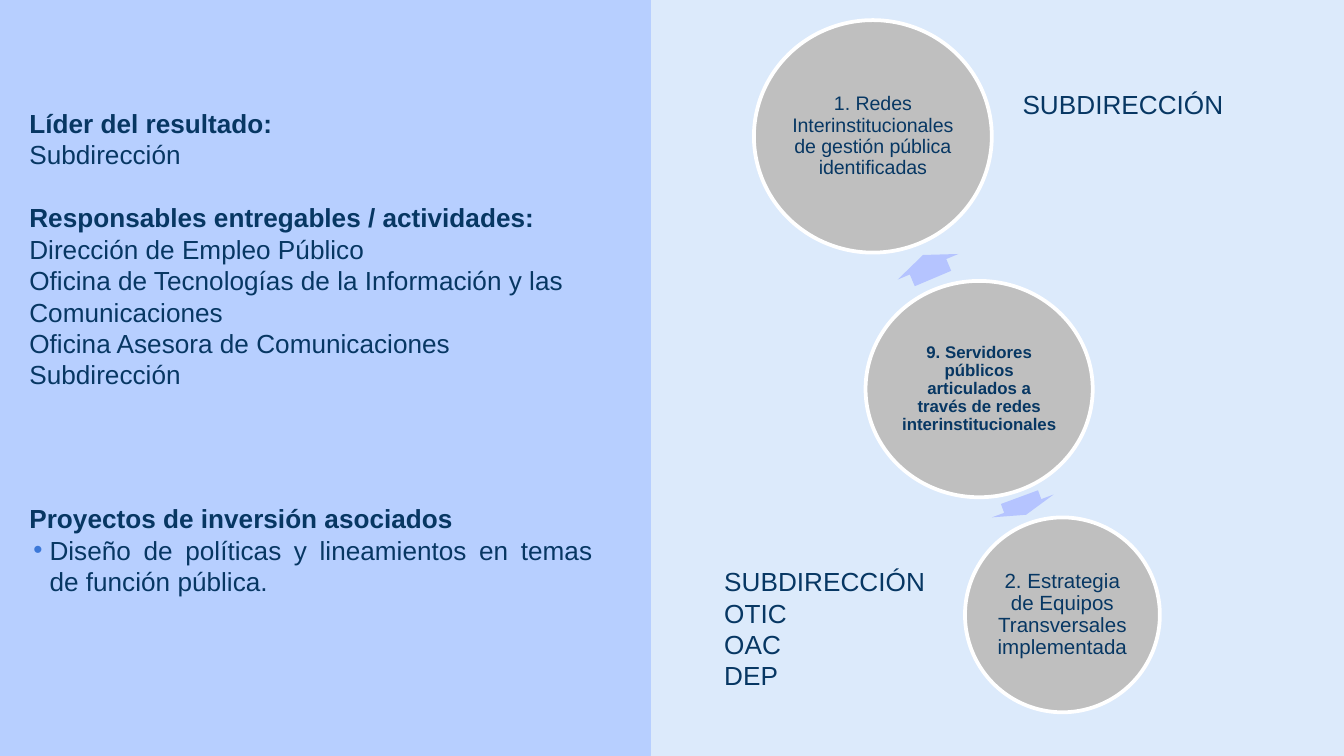
from lxml import etree
from pptx import Presentation, util as u
from pptx.dml.color import RGBColor
from pptx.enum import shapes, text
from pptx.oxml import ns

PX = 9144  # 100 px to the inch
FONT = "Arial"
INK, WHITE, GREY = "073763", "FFFFFF", "BFBFBF"
PALE, BLUE, LILAC, DOT = "DCEAFB", "B7CFFF", "B5C4FF", "3C78D8"
KIND = shapes.MSO_SHAPE
ALIGN = text.PP_ALIGN


def emu(*sizes):
    return [u.Emu(size * PX) for size in sizes]


def paint(part, color):
    """Give a fill or a font a solid colour."""
    if hasattr(part, "solid"):
        part.solid()
        part.fore_color.rgb = RGBColor.from_string(color)
    else:
        part.color.rgb = RGBColor.from_string(color)


def add_form(host, kind, box, fill, edge=None):
    form = host.add_shape(kind, *emu(*box))
    form.shadow.inherit = False
    paint(form.fill, fill)
    if edge:
        paint(form.line.fill, edge)
        form.line.width = u.Pt(2)
    else:
        form.line.fill.background()
    return form


def add_box(host, box, inset=None):
    frame = host.add_textbox(*emu(*box)).text_frame
    frame.word_wrap = True
    if inset is not None:
        frame.margin_left, frame.margin_top = emu(inset, inset)
        frame.margin_right, frame.margin_bottom = emu(inset, inset)
    return frame


def add_run(para, words, size=14, bold=False):
    run = para.add_run()
    run.text = words
    run.font.name = FONT
    run.font.size = u.Pt(size)
    run.font.bold = bold
    paint(run.font, INK)


def add_lines(frame, lines):
    """Add one paragraph for each (words, bold) pair."""
    paras = [frame.paragraphs[0]]
    paras += [frame.add_paragraph() for _ in lines[1:]]
    for para, (words, bold) in zip(paras, lines):
        add_run(para, words, bold=bold)
    return paras


def add_bullet(para):
    props = para._p.get_or_add_pPr()
    left, hang = emu(15, -12)
    props.set("marL", str(left))
    props.set("indent", str(hang))
    tint = etree.SubElement(props, ns.qn("a:buClr"))
    etree.SubElement(tint, ns.qn("a:srgbClr"), val=DOT)
    etree.SubElement(props, ns.qn("a:buFont"), typeface=FONT)
    etree.SubElement(props, ns.qn("a:buChar"), char="•")


def add_panel(host, box):
    x, y, w, h = box
    add_form(host, KIND.RECTANGLE, box, BLUE, BLUE)

    paras = add_lines(add_box(host, (x + 13, y + 75, 505, 293)), [
        ("Líder del resultado:", True),
        ("Subdirección", False),
        ("Responsables entregables / actividades: ", True),
        ("Oficina de Tecnologías de la Información y las Comunicaciones", False),
        ("Oficina Asesora de Comunicaciones", False),
        ("Subdirección", False),
    ])
    paras[2].space_before = u.Pt(17)
    paras[2].add_line_break()
    add_run(paras[2], "Dirección de Empleo Público")

    paras = add_lines(add_box(host, (x + 13, y + 369, 439, 81)), [
        ("Proyectos de inversión asociados", True),
        ("Diseño de políticas y lineamientos en temas de función pública.", False),
    ])
    add_bullet(paras[1])
    paras[1].alignment = ALIGN.JUSTIFY


def add_disc(host, box, words, size, inset=2, bold=False):
    """Draw a circle with its words in the inscribed square."""
    add_form(host, KIND.OVAL, box, GREY, WHITE)
    x, y, w, h = box
    dx, dy = round(w * 0.146), round(h * 0.146)
    frame = add_box(host, (x + dx, y + dy, w - 2 * dx, h - 2 * dy), inset)
    frame.vertical_anchor = text.MSO_ANCHOR.MIDDLE
    para = frame.paragraphs[0]
    para.alignment = ALIGN.CENTER
    para.line_spacing = 0.9
    add_run(para, words, size, bold)


def add_arrow(host, box, turn):
    arrow = add_form(host, KIND.RIGHT_ARROW, box, LILAC)
    arrow.adjustments[0], arrow.adjustments[1] = 0.6, 0.5
    arrow.rotation = turn


def add_chain(host, x, y):
    """Draw the hub, its two results and the areas in charge."""
    group = host.add_group_shape().shapes
    add_disc(group, (x + 115, y + 194, 169, 161),
             "9. Servidores públicos articulados a través de redes interinstitucionales",
             9, inset=1, bold=True)
    add_arrow(group, (x + 152, y + 159, 19, 49), 247.1)
    add_disc(group, (x + 32, y, 177, 173),
             "1. Redes Interinstitucionales de gestión pública identificadas", 10.5)
    add_arrow(group, (x + 225, y + 337, 14, 49), 69.7)
    add_disc(group, (x + 189, y + 370, 145, 145),
             "2. Estrategia de Equipos Transversales implementada", 11)

    areas = ["SUBDIRECCIÓN", "OTIC", "OAC", "DEP"]
    for dx, dy, h, names in [(222, 46, 34, areas[:1]), (0, 401, 104, areas)]:
        frame = add_box(host, (x + dx, y + dy, 172, h))
        add_lines(frame, [(name, False) for name in names])


def main():
    deck = Presentation()
    deck.slide_width = u.Inches(10)
    deck.slide_height = u.Emu(deck.slide_width * 9 // 16)
    slide = deck.slides.add_slide(deck.slide_layouts[6])
    paint(slide.background.fill, PALE)
    add_panel(slide.shapes, (-1, 0, 484, 562))
    add_chain(slide.shapes, 529, 15)
    deck.save("out.pptx")


if __name__ == "__main__":
    main()
